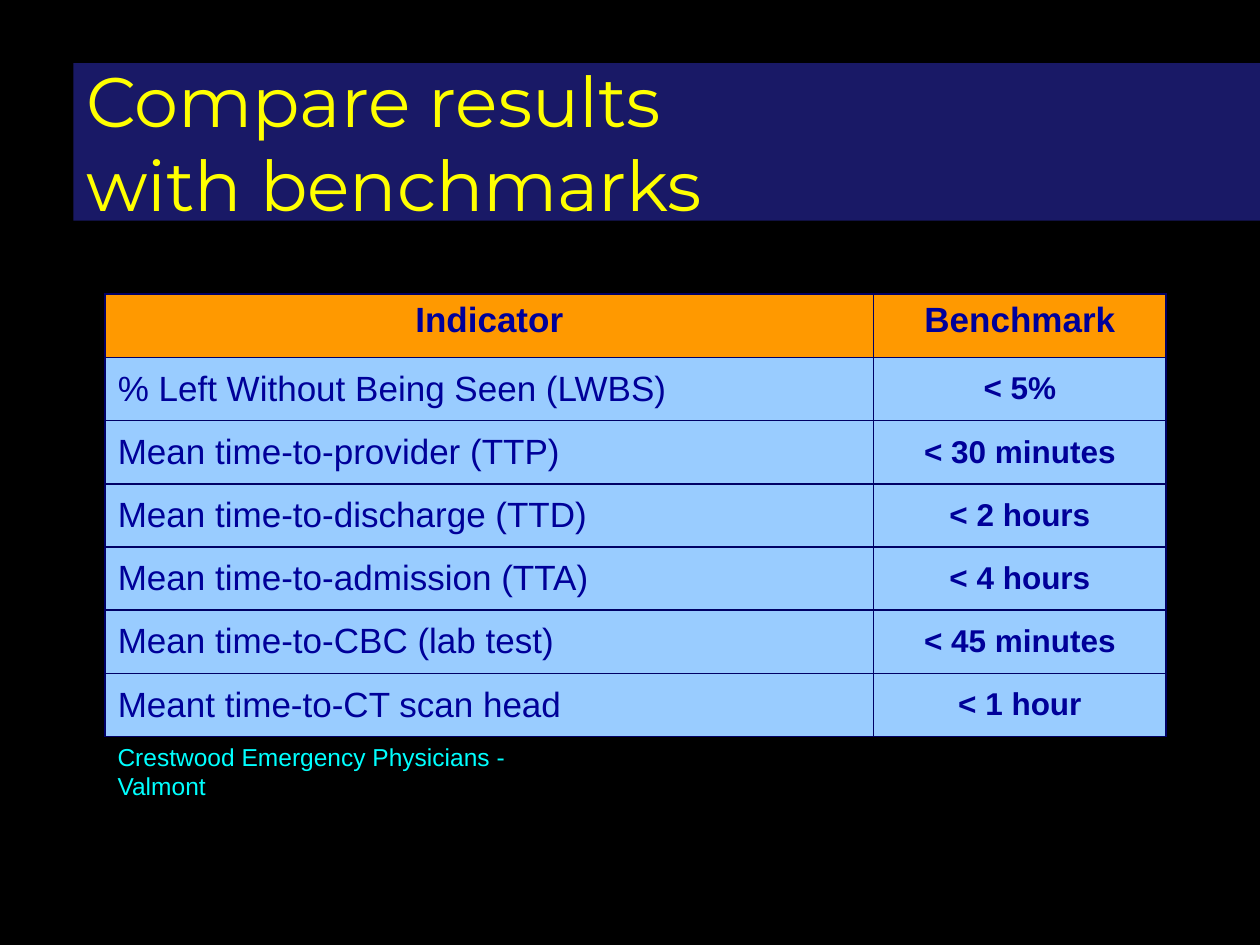
from lxml.etree import SubElement
from pptx import Presentation
from pptx.dml.color import RGBColor
from pptx.enum.text import MSO_ANCHOR as Anchor, MSO_AUTO_SIZE as AutoSize, PP_ALIGN as Align
from pptx.oxml.ns import qn
from pptx.util import Cm, Pt

BLACK = RGBColor(0x00, 0x00, 0x00)
BAND = RGBColor(0x33, 0x33, 0xCC)
YELLOW = RGBColor(0xFF, 0xFF, 0x00)
CYAN = RGBColor(0x00, 0xFF, 0xFF)
ORANGE = RGBColor(0xFF, 0x99, 0x00)
LIGHT_BLUE = RGBColor(0x99, 0xCC, 0xFF)
NAVY = RGBColor(0x00, 0x00, 0x99)
BORDER = RGBColor(0x00, 0x00, 0x66)

ROWS = [
    ("Indicator", "Benchmark"),
    ("% Left Without Being Seen (LWBS)", "< 5%"),
    ("Mean time-to-provider (TTP)", "< 30 minutes"),
    ("Mean time-to-discharge (TTD)", "< 2 hours"),
    ("Mean time-to-admission (TTA)", "< 4 hours"),
    ("Mean time-to-CBC (lab test)", "< 45 minutes"),
    ("Meant time-to-CT scan head", "< 1 hour"),
]


def set_font(paragraph, name, size, color, bold=False):
    font = paragraph.font
    font.name = name
    font.size = Pt(size)
    font.bold = bold
    font.color.rgb = color


def add_borders(cell):
    properties = cell._tc.get_or_add_tcPr()
    for position, side in enumerate(("lnL", "lnR", "lnT", "lnB")):
        line = SubElement(properties, qn(f"a:{side}"), w=str(Pt(1)))
        fill = SubElement(line, qn("a:solidFill"))
        SubElement(fill, qn("a:srgbClr"), val=str(BORDER))
        properties.insert(position, line)


presentation = Presentation()
presentation.slide_width = Cm(25.4)
presentation.slide_height = Cm(19.05)
slide = presentation.slides.add_slide(presentation.slide_layouts[5])
slide.background.fill.solid()
slide.background.fill.fore_color.rgb = BLACK

title = slide.shapes.title
title.left, title.top, title.width, title.height = Cm(1.48), Cm(1.27), Cm(23.92), Cm(3.18)
title.fill.solid()
title.fill.fore_color.rgb = BAND
band_color = title.fill._xPr.find(qn("a:solidFill")).find(qn("a:srgbClr"))
SubElement(band_color, qn("a:alpha"), val="50000")
title.text_frame.text = "Compare results\vwith benchmarks"
title.text_frame.auto_size = AutoSize.NONE
title.text_frame.vertical_anchor = Anchor.MIDDLE
paragraph = title.text_frame.paragraphs[0]
paragraph.alignment = Align.LEFT
set_font(paragraph, "Montserrat", 40, YELLOW)

table = slide.shapes.add_table(
    len(ROWS), 2, Cm(2.12), Cm(5.93), Cm(21.39), Cm(8.92)
).table
table.columns[0].width = Cm(15.49)
table.columns[1].width = Cm(5.9)
for row_index, row in enumerate(ROWS):
    header = row_index == 0
    for column_index, text in enumerate(row):
        benchmark = column_index == 1
        cell = table.cell(row_index, column_index)
        cell.text = text
        cell.fill.solid()
        cell.fill.fore_color.rgb = ORANGE if header else LIGHT_BLUE
        cell.vertical_anchor = Anchor.TOP if header else Anchor.MIDDLE
        paragraph = cell.text_frame.paragraphs[0]
        paragraph.alignment = Align.CENTER if header or benchmark else Align.LEFT
        size = 18 if benchmark and not header else 20
        set_font(paragraph, "Arial", size, NAVY, bold=header or benchmark)
        add_borders(cell)

credit = slide.shapes.add_textbox(Cm(2.12), Cm(14.83), Cm(8.4), Cm(0.84))
credit.text_frame.word_wrap = True
credit.text_frame.text = "Crestwood Emergency Physicians - Valmont"
set_font(credit.text_frame.paragraphs[0], "Arial", 14, CYAN)

presentation.save("out.pptx")
